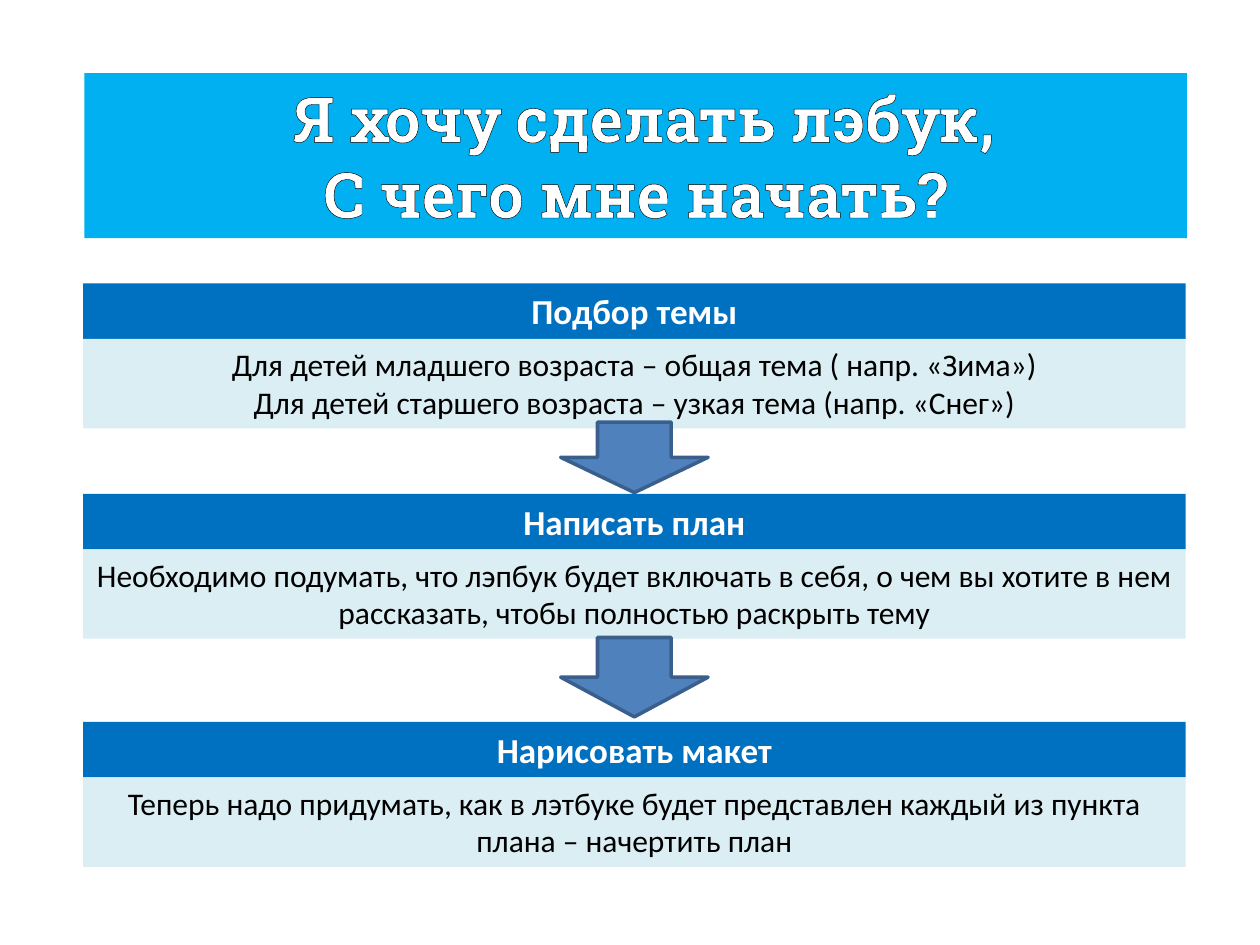
"""Builds a slide with the three first steps of making a lapbook."""
from lxml import etree
from pptx import Presentation
from pptx.dml.color import RGBColor
from pptx.enum.shapes import MSO_SHAPE
from pptx.enum.text import MSO_ANCHOR, MSO_AUTO_SIZE, PP_ALIGN
from pptx.oxml import parse_xml
from pptx.util import Inches, Pt

DOWN_ARROW = MSO_SHAPE.DOWN_ARROW
TOP = MSO_ANCHOR.TOP
GROW = MSO_AUTO_SIZE.SHAPE_TO_FIT_TEXT
CENTER = PP_ALIGN.CENTER

WHITE = RGBColor(0xFF, 0xFF, 0xFF)
BLACK = RGBColor(0, 0, 0)
SKY = RGBColor(0x00, 0xB0, 0xF0)
BLUE = RGBColor(0x00, 0x70, 0xC0)
PALE = RGBColor(0xDB, 0xEE, 0xF4)
ARROW_FILL = RGBColor(0x4F, 0x81, 0xBD)
ARROW_LINE = RGBColor(0x3A, 0x5F, 0x8C)

TITLE = [" Я хочу сделать лэбук,", "С чего мне начать?"]
STEPS = [
    {"top": 2.25, "head": "Подбор темы",
     "body": ["Для детей младшего возраста – общая тема ( напр. «Зима»)",
              "Для детей старшего возраста – узкая тема (напр. «Снег»)"],
     "arrow": (3.35, 0.56)},
    {"top": 3.92, "head": "Написать план",
     "body": ["Необходимо подумать, что лэпбук будет включать в себя, о чем вы "
              "хотите в нем рассказать, чтобы полностью раскрыть тему"],
     "arrow": (5.06, 0.63)},
    {"top": 5.73, "head": "Нарисовать макет",
     "body": ["Теперь надо придумать, как в лэтбуке будет представлен каждый "
              "из пункта плана – начертить план"],
     "arrow": None},
]
LEFT, WIDTH = 0.66, 8.75
HEAD_H, BODY_H, ARROW_W = 0.44, 0.71, 1.17
OUTLINE = ('<a:ln xmlns:a="http://schemas.openxmlformats.org/drawingml/2006/main" '
           'w="9525"><a:solidFill><a:srgbClr val="000000"/></a:solidFill></a:ln>')


def write(shape, lines, size, color, font="Calibri", bold=False, outline=False):
    tf = shape.text_frame
    tf.word_wrap = True
    tf.auto_size = GROW
    tf.vertical_anchor = TOP
    for i, line in enumerate(lines):
        p = tf.add_paragraph() if i else tf.paragraphs[0]
        p.alignment = CENTER
        r = p.add_run()
        r.text = line
        r.font.name = font
        r.font.size = Pt(size)
        r.font.bold = bold
        r.font.color.rgb = color
        if outline:
            r.font._element.insert(0, parse_xml(OUTLINE))


def paint(shape, color):
    shape.fill.solid()
    shape.fill.fore_color.rgb = color


def add_box(s, top, height, color):
    box = s.shapes.add_textbox(Inches(LEFT), Inches(top), Inches(WIDTH), Inches(height))
    paint(box, color)
    return box


def add_arrow(s, top, height):
    left = LEFT + (WIDTH - ARROW_W) / 2
    arrow = s.shapes.add_shape(DOWN_ARROW, Inches(left), Inches(top),
                               Inches(ARROW_W), Inches(height))
    arrow.shadow.inherit = False
    paint(arrow, ARROW_FILL)
    arrow.line.color.rgb = ARROW_LINE
    arrow.line.width = Pt(2)


def main():
    prs = Presentation()
    prs.slide_width, prs.slide_height = Inches(10), Inches(7.5)
    s = prs.slides.add_slide(prs.slide_layouts[5])

    title = s.shapes.title
    title.left, title.top = Inches(0.67), Inches(0.58)
    title.width, title.height = Inches(WIDTH), Inches(1.31)
    paint(title, SKY)
    write(title, TITLE, 36, WHITE, font="Roboto Slab", bold=True, outline=True)

    for step in STEPS:
        top = step["top"]
        write(add_box(s, top, HEAD_H, BLUE), [step["head"]], 20, WHITE, bold=True)
        write(add_box(s, top + HEAD_H, BODY_H, PALE), step["body"], 18, BLACK)
        if step["arrow"]:
            add_arrow(s, *step["arrow"])

    prs.save("out.pptx")


if __name__ == "__main__":
    main()
